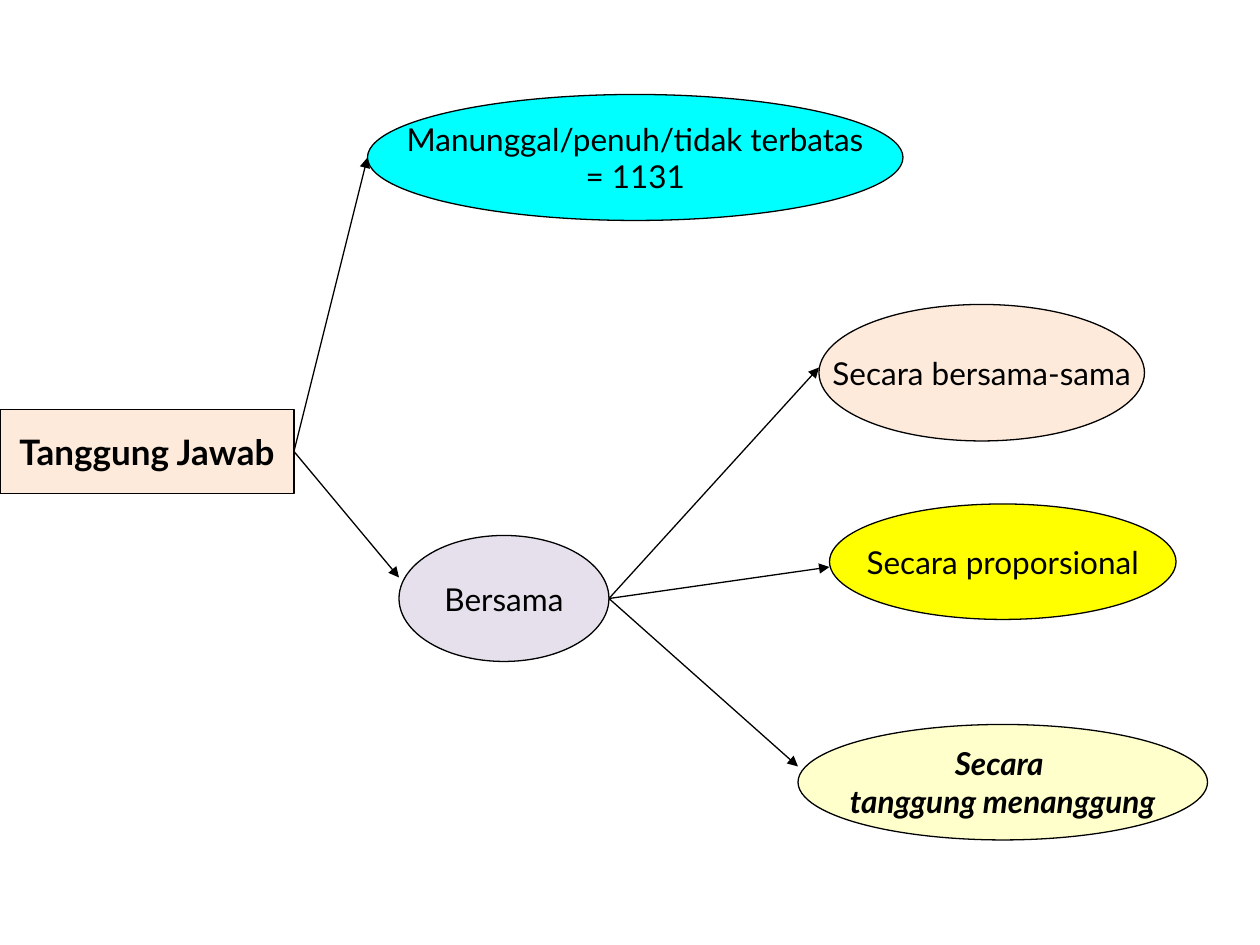
from dataclasses import dataclass

from lxml import etree
from pptx import Presentation
from pptx.dml.color import RGBColor
from pptx.enum.shapes import MSO_CONNECTOR, MSO_SHAPE
from pptx.enum.text import MSO_ANCHOR, PP_ALIGN
from pptx.oxml.ns import qn
from pptx.util import Inches, Pt

RECTANGLE, ELLIPSE = MSO_SHAPE.RECTANGLE, MSO_SHAPE.OVAL
STRAIGHT = MSO_CONNECTOR.STRAIGHT
MIDDLE, CENTER = MSO_ANCHOR.MIDDLE, PP_ALIGN.CENTER

COLUMNS, ROWS = 120, 90
BLANK_LAYOUT = 6


@dataclass(frozen=True)
class Theme:
    font: str = "Lato"
    ink: str = "000000"
    peach: str = "FDEADA"
    cyan: str = "00FFFF"
    lavender: str = "E6E0EC"
    yellow: str = "FFFF00"
    cream: str = "FFFFCC"
    heading_size: int = 20
    body_size: int = 18
    line_width: float = 0.75


def write_text(text_frame, text, *, font, size, color, bold=False, italic=False):
    """Fill the frame with centred text, one paragraph per line."""
    text_frame.word_wrap = False
    text_frame.vertical_anchor = MIDDLE
    for index, line in enumerate(text.split("\n")):
        paragraph = text_frame.add_paragraph() if index else text_frame.paragraphs[0]
        paragraph.alignment = CENTER
        run = paragraph.add_run()
        run.text = line
        run.font.name = font
        run.font.size = Pt(size)
        run.font.bold = bold
        run.font.italic = italic
        run.font.color.rgb = RGBColor.from_string(color)


class Diagram:
    """Draws nodes and arrows on a slide, with lengths in grid columns and rows."""

    def __init__(self, presentation, theme):
        self.theme = theme
        self.slide = presentation.slides.add_slide(
            presentation.slide_layouts[BLANK_LAYOUT])
        self.column = presentation.slide_width / COLUMNS
        self.row = presentation.slide_height / ROWS

    def place(self, column, row):
        return round(column * self.column), round(row * self.row)

    def style_line(self, line):
        line.color.rgb = RGBColor.from_string(self.theme.ink)
        line.width = Pt(self.theme.line_width)

    def node(self, text, left, top, width, height, fill,
             kind=ELLIPSE, size=None, **text_format):
        shape = self.slide.shapes.add_shape(
            kind, *self.place(left, top), *self.place(width, height))
        shape.shadow.inherit = False
        shape.fill.solid()
        shape.fill.fore_color.rgb = RGBColor.from_string(fill)
        self.style_line(shape.line)
        write_text(shape.text_frame, text, font=self.theme.font,
                   size=size or self.theme.body_size, color=self.theme.ink,
                   **text_format)

    def arrow(self, start, end):
        connector = self.slide.shapes.add_connector(
            STRAIGHT, *self.place(*start), *self.place(*end))
        self.style_line(connector.line)
        properties = connector._element.spPr
        etree.SubElement(properties.find(qn("a:ln")), qn("a:tailEnd"), type="triangle")
        etree.SubElement(properties, qn("a:effectLst"))

    def branch(self, start, ends):
        for end in ends:
            self.arrow(start, end)


def main():
    presentation = Presentation()
    presentation.slide_width, presentation.slide_height = Inches(10), Inches(7.5)
    theme = Theme()
    diagram = Diagram(presentation, theme)

    diagram.node("Tanggung Jawab", 0, 39, 28, 8, theme.peach,
                 kind=RECTANGLE, size=theme.heading_size, bold=True)
    diagram.node("Manunggal/penuh/tidak terbatas\n= 1131", 35, 9, 51, 12, theme.cyan)
    diagram.node("Bersama", 38, 51, 20, 12, theme.lavender)
    diagram.node("Secara bersama-sama", 78, 29, 31, 13, theme.peach)
    diagram.node("Secara proporsional", 79, 48, 33, 11, theme.yellow)
    diagram.node("Secara \ntanggung menanggung", 76, 69, 39, 11, theme.cream,
                 bold=True, italic=True)

    diagram.branch((28, 43), [(35, 15), (38, 55)])
    diagram.branch((58, 57), [(78, 35), (79, 54), (76, 73)])

    presentation.save("out.pptx")


if __name__ == "__main__":
    main()
